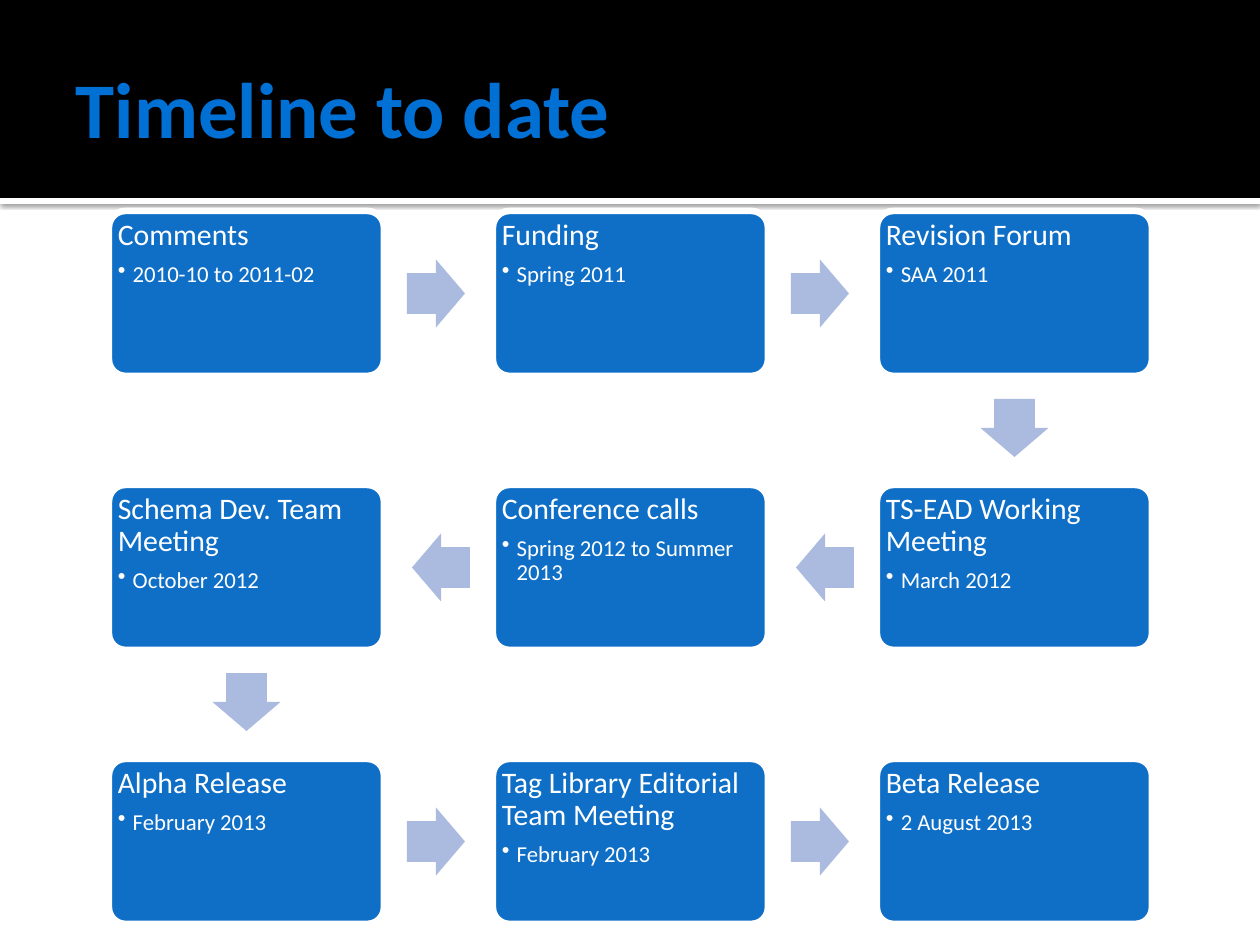
from lxml import etree
from pptx import Presentation
from pptx.dml.color import RGBColor
from pptx.enum.shapes import MSO_SHAPE
from pptx.enum.text import MSO_ANCHOR, PP_ALIGN
from pptx.oxml import parse_xml
from pptx.oxml.ns import nsdecls, qn
from pptx.util import Emu, Pt

RECT, ROUNDED, ARROW = MSO_SHAPE.RECTANGLE, MSO_SHAPE.ROUNDED_RECTANGLE, MSO_SHAPE.RIGHT_ARROW
TOP, MIDDLE = MSO_ANCHOR.TOP, MSO_ANCHOR.MIDDLE
LEFT = PP_ALIGN.LEFT

PX = 914400 // 126
FONT = "Calibri"
WHITE, BLACK = "FFFFFF", "000000"
TITLE_BLUE, BOX_BLUE, ARROW_BLUE = "0070D5", "0F6FC6", "ABBBDF"

# Grid of milestone boxes, in px
GRID_LEFT, GRID_TOP = 109, 211
COLUMN_STEP, ROW_STEP = 384, 274
BOX_W, BOX_H = 275, 165
ARROW_W, ARROW_H = 58, 68
ARROW_GAP = 52  # from a box edge to the centre of the arrow leaving it
COLUMNS = 3

MILESTONES = [
    ("Comments", "2010-10 to 2011-02"),
    ("Funding", "Spring 2011"),
    ("Revision Forum", "SAA 2011"),
    ("TS-EAD Working Meeting", "March 2012"),
    ("Conference calls", "Spring 2012 to Summer 2013"),
    ("Schema Dev. Team Meeting", "October 2012"),
    ("Alpha Release", "February 2013"),
    ("Tag Library Editorial Team Meeting", "February 2013"),
    ("Beta Release", "2 August 2013"),
]


def px(length):
    return Emu(round(length * PX))


def rgb(value):
    return RGBColor.from_string(value)


def add_block(slide, kind, left, top, width, height, fill):
    block = slide.shapes.add_shape(kind, px(left), px(top), px(width), px(height))
    block.shadow.inherit = False
    block.fill.solid()
    block.fill.fore_color.rgb = rgb(fill)
    block.line.fill.background()
    return block


def set_frame(frame, anchor, margins):
    frame.word_wrap = True
    frame.vertical_anchor = anchor
    for side, margin in margins.items():
        setattr(frame, f"margin_{side}", px(margin))


def write(paragraph, text, size, color, bold=False):
    paragraph.alignment = LEFT
    run = paragraph.add_run()
    run.text = text
    for name, value in {"name": FONT, "size": Pt(size), "bold": bold}.items():
        setattr(run.font, name, value)
    run.font.color.rgb = rgb(color)


def add_shadow(block):
    effects = block._element.spPr.find(qn("a:effectLst"))
    effects.append(parse_xml(
        f'<a:outerShdw {nsdecls("a")} blurRad="31750" dist="10160" dir="5400000" '
        f'algn="tl" rotWithShape="0"><a:srgbClr val="{BLACK}">'
        '<a:alpha val="60000"/></a:srgbClr></a:outerShdw>'))


def add_header(slide):
    stripe = add_block(slide, RECT, 0, 198, 1260, 6, WHITE)
    add_shadow(stripe)
    add_block(slide, RECT, 0, 0, 1260, 198, BLACK)

    # The title sits in front of the band
    title = slide.shapes.title
    slide.shapes._spTree.append(title._element)
    bounds = {"left": 63, "top": 21, "width": 1134, "height": 173}
    for name, value in bounds.items():
        setattr(title, name, px(value))
    set_frame(title.text_frame, MIDDLE, {"left": 13, "top": 6, "right": 6, "bottom": 6})
    write(title.text_frame.paragraphs[0], "Timeline to date", 45, TITLE_BLUE, bold=True)


def add_bullet(paragraph, indent):
    properties = paragraph._p.get_or_add_pPr()
    properties.set("marL", str(px(indent)))
    properties.set("indent", str(px(-indent)))
    etree.SubElement(properties, qn("a:buChar")).set("char", "•")


def add_milestone(slide, left, top, heading, date):
    box = add_block(slide, ROUNDED, left, top, BOX_W, BOX_H, BOX_BLUE)
    box.adjustments[0] = 0.1
    box.line.color.rgb = rgb(WHITE)
    box.line.width = Pt(3.78)

    frame = box.text_frame
    set_frame(frame, TOP, dict.fromkeys(("left", "top", "right", "bottom"), 4))
    lines = [(frame.paragraphs[0], heading, 17, 6), (frame.add_paragraph(), date, 13, 2)]
    for paragraph, text, size, space in lines:
        write(paragraph, text, size, WHITE)
        paragraph.line_spacing = 0.9
        paragraph.space_after = Pt(space)
    dated = frame.paragraphs[1]
    dated.level = 1
    add_bullet(dated, 15)


def add_arrow(slide, left, top, dx, dy, rotation):
    center_x = left + BOX_W / 2 + dx * (BOX_W / 2 + ARROW_GAP)
    center_y = top + BOX_H / 2 + dy * (BOX_H / 2 + ARROW_GAP)
    arrow = add_block(slide, ARROW, center_x - ARROW_W / 2, center_y - ARROW_H / 2,
                      ARROW_W, ARROW_H, ARROW_BLUE)
    arrow.adjustments[0] = 0.6
    arrow.adjustments[1] = 0.5
    arrow.rotation = rotation


def add_timeline(slide):
    # Rows run alternately rightwards and leftwards
    for index, (heading, date) in enumerate(MILESTONES):
        row, step = divmod(index, COLUMNS)
        rightwards = row % 2 == 0
        column = step if rightwards else COLUMNS - 1 - step
        left = GRID_LEFT + column * COLUMN_STEP
        top = GRID_TOP + row * ROW_STEP
        add_milestone(slide, left, top, heading, date)

        if index == len(MILESTONES) - 1:
            continue
        if step == COLUMNS - 1:
            add_arrow(slide, left, top, 0, 1, 90)
        elif rightwards:
            add_arrow(slide, left, top, 1, 0, 0)
        else:
            add_arrow(slide, left, top, -1, 0, 180)


def main():
    deck = Presentation()
    deck.slide_width, deck.slide_height = px(1260), px(945)
    slide = deck.slides.add_slide(deck.slide_layouts[5])
    add_header(slide)
    add_timeline(slide)
    deck.save("out.pptx")


if __name__ == "__main__":
    main()
